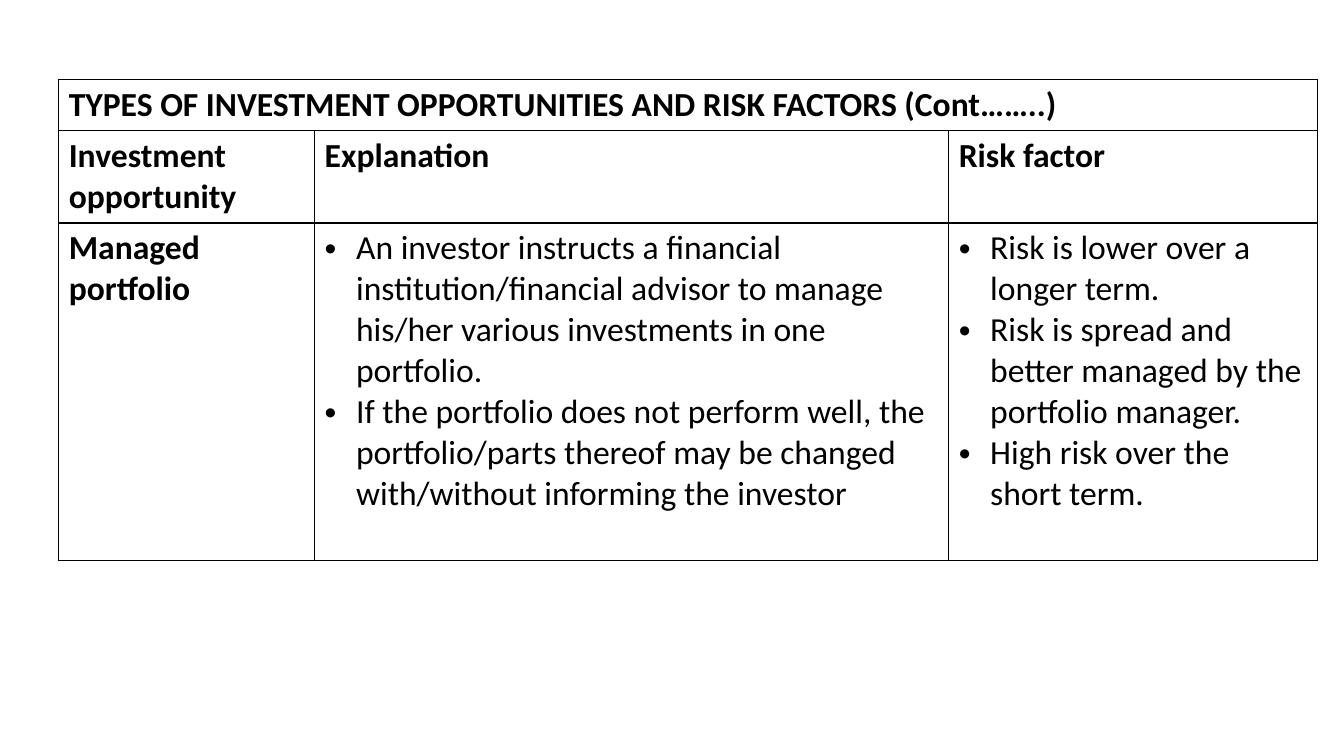
import dataclasses

import pptx
import pptx.dml.color
import pptx.oxml
import pptx.oxml.ns
import pptx.util
from pptx.util import Cm


@dataclasses.dataclass(frozen=True)
class Theme:
    font: str = "Calibri"
    size: int = 24
    ink: str = "000000"
    border_width: float = 1
    indent: float = 0.79


THEME = Theme()
COLUMN_WIDTHS = (6.45, 15.98, 9.3)
ROW_HEIGHTS = (1.28, 2.32, 8.51)
TITLE = "TYPES OF INVESTMENT OPPORTUNITIES AND RISK FACTORS (Cont……..)"
HEADINGS = ("Investment opportunity", "Explanation", "Risk factor")
OPPORTUNITY = "Managed portfolio"
EXPLANATIONS = (
    "An investor instructs a financial institution/financial advisor to manage "
    "his/her various investments in one portfolio.",
    "If the portfolio does not perform well, the portfolio/parts thereof may be "
    "changed with/without informing the investor",
)
RISKS = (
    "Risk is lower over a longer term.",
    "Risk is spread and better managed by the portfolio manager.",
    "High risk over the short term.",
)


def add_bullet(para):
    properties = para._p.get_or_add_pPr()
    properties.set("marL", str(Cm(THEME.indent)))
    properties.set("indent", str(-Cm(THEME.indent)))
    namespace = pptx.oxml.ns.nsdecls("a")
    for xml in (f'<a:buFont {namespace} typeface="Arial"/>',
                f'<a:buChar {namespace} char="•"/>'):
        properties.append(pptx.oxml.parse_xml(xml))


def write_text(para, text, *, bold=False, bullet=False):
    if bullet:
        add_bullet(para)
    span = para.add_run()
    span.text = text
    span.font.name = THEME.font
    span.font.size = pptx.util.Pt(THEME.size)
    span.font.bold = bold
    span.font.color.rgb = pptx.dml.color.RGBColor.from_string(THEME.ink)


def write_bullets(cell, items):
    frame = cell.text_frame
    for index, item in enumerate(items):
        para = frame.add_paragraph() if index else frame.paragraphs[0]
        write_text(para, item, bullet=True)


def write_heading(cell, text):
    write_text(cell.text_frame.paragraphs[0], text, bold=True)


def style_cell(cell):
    """Clear the fill and rule all four sides."""
    cell.fill.background()
    properties = cell._tc.get_or_add_tcPr()
    width = pptx.util.Pt(THEME.border_width)
    for position, side in enumerate(("lnL", "lnR", "lnT", "lnB")):
        properties.insert(position, pptx.oxml.parse_xml(
            f'<a:{side} {pptx.oxml.ns.nsdecls("a")} w="{width}"><a:solidFill>'
            f'<a:srgbClr val="{THEME.ink}"/></a:solidFill></a:{side}>'))


def add_grid(slide, left, top):
    frame = slide.shapes.add_table(
        len(ROW_HEIGHTS), len(COLUMN_WIDTHS), Cm(left), Cm(top),
        Cm(sum(COLUMN_WIDTHS)), Cm(sum(ROW_HEIGHTS)))
    table = frame.table
    table.first_row = False
    table.horz_banding = False
    for column, width in zip(table.columns, COLUMN_WIDTHS):
        column.width = Cm(width)
    for row, height in zip(table.rows, ROW_HEIGHTS):
        row.height = Cm(height)
    for cell in table.iter_cells():
        style_cell(cell)
    return table


def main():
    deck = pptx.Presentation()
    deck.slide_width, deck.slide_height = Cm(33.87), Cm(19.05)
    slide = deck.slides.add_slide(deck.slide_layouts[6])
    table = add_grid(slide, 1.48, 2.01)
    table.cell(0, 0).merge(table.cell(0, len(COLUMN_WIDTHS) - 1))
    write_heading(table.cell(0, 0), TITLE)
    for column, heading in enumerate(HEADINGS):
        write_heading(table.cell(1, column), heading)
    write_heading(table.cell(2, 0), OPPORTUNITY)
    write_bullets(table.cell(2, 1), EXPLANATIONS)
    write_bullets(table.cell(2, 2), RISKS)
    deck.save("out.pptx")


if __name__ == "__main__":
    main()
